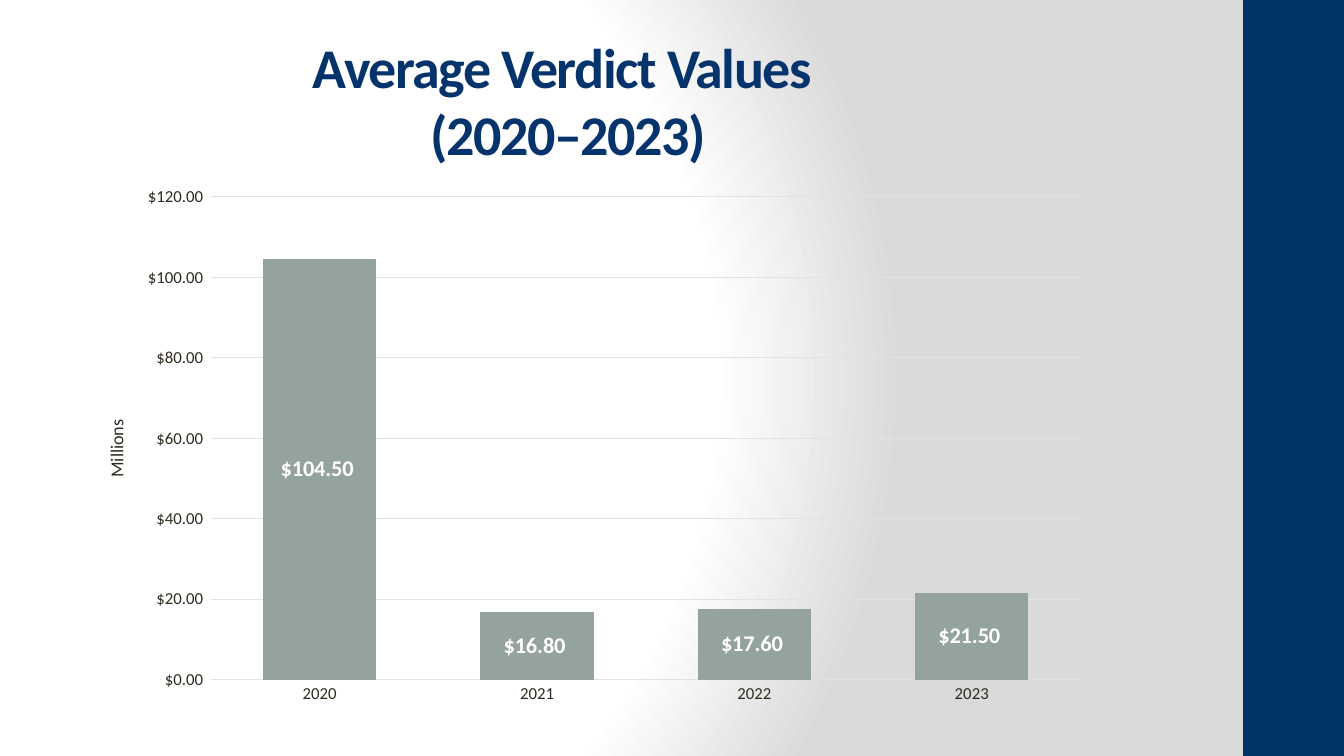
from lxml import etree
from pptx import Presentation
from pptx.chart.data import CategoryChartData
from pptx.dml.color import RGBColor
from pptx.enum.chart import XL_CHART_TYPE, XL_LABEL_POSITION, XL_TICK_MARK
from pptx.enum.shapes import MSO_SHAPE
from pptx.enum.text import MSO_ANCHOR, PP_ALIGN
from pptx.oxml import parse_xml
from pptx.oxml.ns import nsdecls, qn
from pptx.util import Inches, Pt

STACKED = XL_CHART_TYPE.COLUMN_STACKED
LABEL_CENTER = XL_LABEL_POSITION.CENTER
NO_TICK = XL_TICK_MARK.NONE
RECTANGLE = MSO_SHAPE.RECTANGLE
MIDDLE = MSO_ANCHOR.MIDDLE
CENTER = PP_ALIGN.CENTER

NAVY = RGBColor(0x00, 0x33, 0x66)
TITLE_BLUE = RGBColor(0x05, 0x33, 0x6C)
INK = RGBColor(0x2F, 0x2B, 0x20)
GRID = RGBColor(0xE5, 0xE2, 0xD9)
SAGE = RGBColor(0x95, 0xA3, 0x9D)
WHITE = RGBColor(0xFF, 0xFF, 0xFF)
GREY = RGBColor(0xDA, 0xDA, 0xDA)

HEADING = "Average Verdict Values \v(2020–2023)"
UNIT = "Millions"
VERDICTS = {"2020": 104.5, "2021": 16.8, "2022": 17.6, "2023": 21.5}
DOLLARS = '"$"#,##0.00_);[Red]\\("$"#,##0.00\\)'
BACKDROP_STOPS = [(0, WHITE), (75, WHITE), (100, GREY)]
BACKDROP_FOCUS = {"l": 20, "t": 50, "r": 100, "b": 50}

FORMATS = {
    "heading": {"name": "Calibri", "size": Pt(40), "bold": True, "color": TITLE_BLUE},
    "chart": {"name": "Calibri", "size": Pt(10), "color": INK},
    "axis": {"name": "Calibri", "size": Pt(12), "color": INK},
    "unit": {"name": "Calibri", "size": Pt(13), "bold": False, "color": INK},
    "value": {"name": "Calibri", "size": Pt(16), "bold": True, "color": WHITE},
}


def style(font, role):
    for attribute, value in FORMATS[role].items():
        if attribute == "color":
            font.color.rgb = value
        else:
            setattr(font, attribute, value)


def paint_backdrop(slide):
    fill = slide.background.fill
    fill.gradient()
    gradient = slide.background._cSld.find(".//" + qn("a:gradFill"))
    for child in list(gradient):
        gradient.remove(child)
    stops = etree.SubElement(gradient, qn("a:gsLst"))
    for percent, color in BACKDROP_STOPS:
        stop = etree.SubElement(stops, qn("a:gs"), pos=str(percent * 1000))
        etree.SubElement(stop, qn("a:srgbClr"), val=str(color))
    circle = etree.SubElement(gradient, qn("a:path"), path="circle")
    focus = {side: str(percent * 1000) for side, percent in BACKDROP_FOCUS.items()}
    etree.SubElement(circle, qn("a:fillToRect"), focus)


def place(parent, index, settings):
    for old in parent.findall(qn("c:layout")):
        parent.remove(old)
    layout = parse_xml(f"<c:layout {nsdecls('c')}/>")
    manual = etree.SubElement(layout, qn("c:manualLayout"))
    for tag, value in settings.items():
        etree.SubElement(manual, qn("c:" + tag), val=str(value))
    parent.insert(index, layout)


def add_heading(slide):
    heading = slide.shapes.add_textbox(Inches(0.08), Inches(0.67), Inches(11.11), Inches(0.63))
    frame = heading.text_frame
    frame.word_wrap = True
    frame.vertical_anchor = MIDDLE
    paragraph = frame.paragraphs[0]
    paragraph.text = HEADING
    paragraph.alignment = CENTER
    for run in paragraph.runs:
        style(run.font, "heading")
        run._r.get_or_add_rPr().set("spc", "-100")


def add_verdict_chart(slide):
    verdicts = CategoryChartData(number_format=DOLLARS)
    verdicts.categories = list(VERDICTS)
    verdicts.add_series("Series 1", list(VERDICTS.values()))
    chart = slide.shapes.add_chart(
        STACKED, Inches(0.75), Inches(1.75), Inches(10.17), Inches(5.33), verdicts
    ).chart
    chart.has_legend = False
    chart.has_title = False
    style(chart.font, "chart")

    years, amounts = chart.category_axis, chart.value_axis
    for axis in (years, amounts):
        axis.major_tick_mark = NO_TICK
        axis.minor_tick_mark = NO_TICK
        axis.format.line.fill.background()
        style(axis.tick_labels.font, "axis")
    amounts.minimum_scale, amounts.maximum_scale, amounts.major_unit = 0, 120, 20
    amounts.tick_labels.number_format = DOLLARS
    amounts.tick_labels.number_format_is_linked = False
    amounts.major_gridlines.format.line.color.rgb = GRID
    amounts.major_gridlines.format.line.width = Pt(0.75)

    unit = amounts.axis_title
    unit.text_frame.text = UNIT
    style(unit.text_frame.paragraphs[0].runs[0].font, "unit")
    unit.text_frame._txBody.bodyPr.set("rot", "-5400000")
    unit.text_frame._txBody.bodyPr.set("vert", "horz")
    place(unit._element, 1, {"xMode": "edge", "yMode": "edge", "x": 0.025, "y": 0.447})

    plot = chart.plots[0]
    plot.gap_width = 92
    plot.overlap = 100
    plot.vary_by_categories = False
    bars = plot.series[0]
    bars.format.fill.solid()
    bars.format.fill.fore_color.rgb = SAGE
    labels = bars.data_labels
    labels.show_value = True
    labels.position = LABEL_CENTER
    labels.number_format = DOLLARS
    labels.number_format_is_linked = False
    style(labels.font, "value")
    place(chart._chartSpace.chart.plotArea, 0, {
        "layoutTarget": "inner", "xMode": "edge", "yMode": "edge",
        "x": 0.132, "y": 0.038, "w": 0.848, "h": 0.899,
    })


def main():
    deck = Presentation()
    deck.slide_width, deck.slide_height = Inches(13.33), Inches(7.5)
    slide = deck.slides.add_slide(deck.slide_layouts[6])
    paint_backdrop(slide)
    side_band = slide.shapes.add_shape(RECTANGLE, Inches(12.33), 0, Inches(1), Inches(7.5))
    side_band.shadow.inherit = False
    side_band.fill.solid()
    side_band.fill.fore_color.rgb = NAVY
    side_band.line.fill.background()
    add_heading(slide)
    add_verdict_chart(slide)
    deck.save("out.pptx")


if __name__ == "__main__":
    main()
